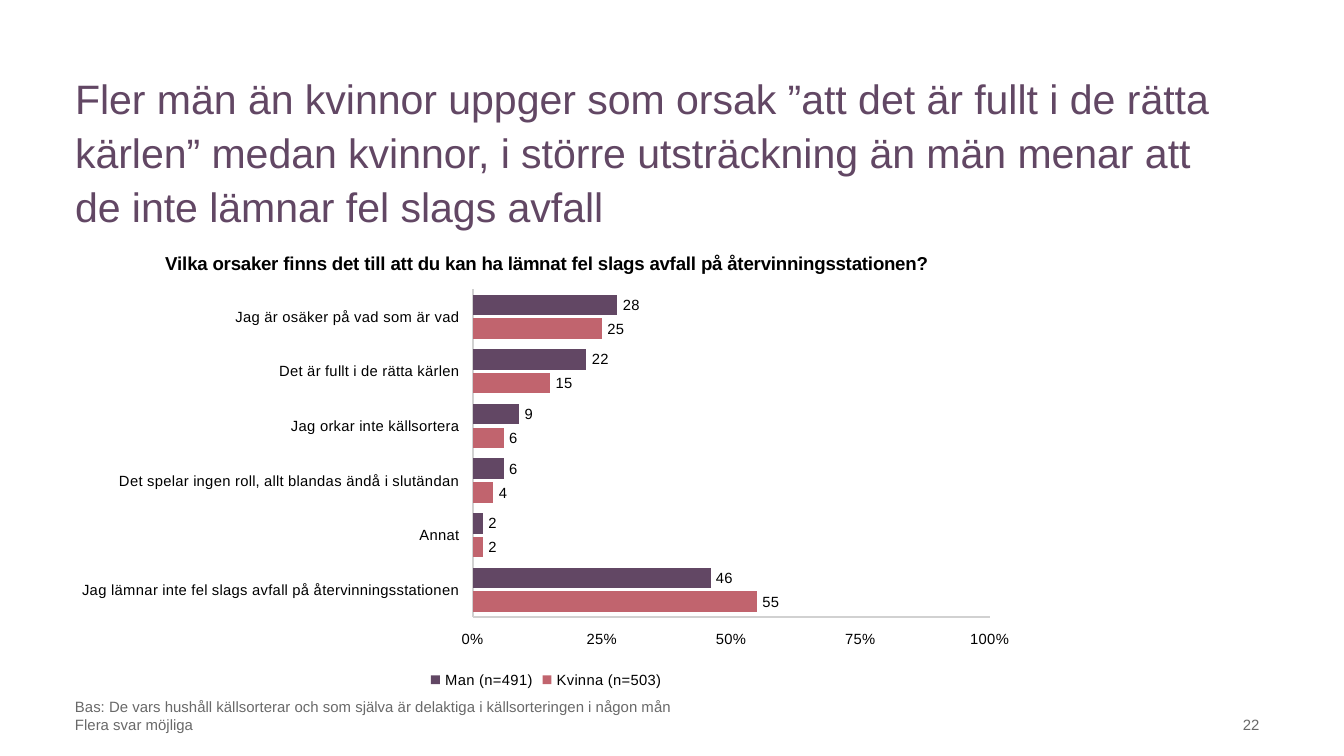
import lxml.etree
import pptx
import pptx.chart.data
import pptx.dml.color
import pptx.enum.chart
import pptx.enum.text
import pptx.oxml
import pptx.oxml.ns
import pptx.util

COLORS = {
    "plum": "624764",
    "rose": "C1646E",
    "gray": "696969",
    "axis": "D1D1D1",
    "black": "000000",
}
FONT = "Arial"
CELL = 0.1
COLUMNS, ROWS = 100, 56.25
LABEL_SIZE = 7.9
CATEGORIES = [
    "Jag lämnar inte fel slags avfall på återvinningsstationen",
    "Annat",
    "Det spelar ingen roll, allt blandas ändå i slutändan",
    "Jag orkar inte källsortera",
    "Det är fullt i de rätta kärlen",
    "Jag är osäker på vad som är vad",
]
SERIES = [
    ("Kvinna (n=503)", "rose", (55, 2, 4, 6, 15, 25)),
    ("Man (n=491)", "plum", (46, 2, 6, 9, 22, 28)),
]
PLOT_PERCENT = {"x": 42.4, "y": 12.6, "w": 53.5, "h": 70.9}


def grid(*cells):
    return [pptx.util.Inches(cell * CELL) for cell in cells]


def rgb(name):
    return pptx.dml.color.RGBColor.from_string(COLORS[name])


def style_font(font, size, color="black", bold=False):
    font.name = FONT
    font.size = pptx.util.Pt(size)
    font.bold = bold
    font.color.rgb = rgb(color)


def add_text(slide, text, area, size=8, color="gray", align="LEFT",
             anchor="BOTTOM", line_spacing=None):
    shape = slide.shapes.add_textbox(*grid(*area))
    frame = shape.text_frame
    frame.word_wrap = True
    frame.vertical_anchor = getattr(pptx.enum.text.MSO_ANCHOR, anchor)
    frame.text = text
    for paragraph in frame.paragraphs:
        paragraph.alignment = getattr(pptx.enum.text.PP_ALIGN, align)
        paragraph.line_spacing = line_spacing
        for run in paragraph.runs:
            style_font(run.font, size, color)


def style_axis(axis):
    axis.has_major_gridlines = False
    axis.major_tick_mark = pptx.enum.chart.XL_TICK_MARK.NONE
    axis.minor_tick_mark = pptx.enum.chart.XL_TICK_MARK.NONE
    axis.tick_label_position = pptx.enum.chart.XL_TICK_LABEL_POSITION.LOW
    axis.format.line.color.rgb = rgb("axis")
    axis.format.line.width = pptx.util.Pt(0.75)
    style_font(axis.tick_labels.font, LABEL_SIZE)


def set_plot_layout(chart):
    plot_area = chart._chartSpace.chart.plotArea
    layout_tag = pptx.oxml.ns.qn("c:layout")
    for layout in plot_area.findall(layout_tag):
        plot_area.remove(layout)
    layout = lxml.etree.Element(layout_tag)
    manual = lxml.etree.SubElement(layout, pptx.oxml.ns.qn("c:manualLayout"))
    settings = {"layoutTarget": "inner", "xMode": "edge", "yMode": "edge"}
    settings.update({name: value / 100 for name, value in PLOT_PERCENT.items()})
    for name, value in settings.items():
        element = lxml.etree.SubElement(manual, pptx.oxml.ns.qn(f"c:{name}"))
        element.set("val", str(value))
    plot_area.insert(0, layout)


def style_series(series, color):
    series.format.fill.solid()
    series.format.fill.fore_color.rgb = rgb(color)
    series.invert_if_negative = False
    labels = series.data_labels
    labels.show_value = True
    labels.number_format = "0"
    labels.number_format_is_linked = False
    labels.position = pptx.enum.chart.XL_LABEL_POSITION.OUTSIDE_END
    style_font(labels.font, LABEL_SIZE)


def add_bar_chart(slide, title, area):
    data = pptx.chart.data.CategoryChartData()
    data.categories = CATEGORIES
    for name, _, values in SERIES:
        data.add_series(name, values)
    chart = slide.shapes.add_chart(
        pptx.enum.chart.XL_CHART_TYPE.BAR_CLUSTERED, *grid(*area), data
    ).chart
    style_font(chart.font, 10)

    chart.has_title = True
    chart.chart_title.text_frame.text = title
    run = chart.chart_title.text_frame.paragraphs[0].runs[0]
    style_font(run.font, 10, bold=True)

    chart.has_legend = True
    chart.legend.position = pptx.enum.chart.XL_LEGEND_POSITION.BOTTOM
    chart.legend.include_in_layout = False
    style_font(chart.legend.font, LABEL_SIZE)

    plot = chart.plots[0]
    plot.vary_by_categories = False
    plot.gap_width = 50
    plot.overlap = -16
    for series, (_, color, _) in zip(plot.series, SERIES):
        style_series(series, color)

    for axis in (chart.category_axis, chart.value_axis):
        style_axis(axis)
    chart.value_axis.minimum_scale = 0
    chart.value_axis.maximum_scale = 100
    chart.value_axis.major_unit = 25
    chart.value_axis.tick_labels.number_format = "General\\%"
    chart.value_axis.tick_labels.number_format_is_linked = False
    set_plot_layout(chart)


def main():
    presentation = pptx.Presentation()
    presentation.slide_width, presentation.slide_height = grid(COLUMNS, ROWS)
    slide = presentation.slides.add_slide(presentation.slide_layouts[6])

    add_text(
        slide,
        "Fler män än kvinnor uppger som orsak ”att det är fullt i de rätta "
        "kärlen” medan kvinnor, i större utsträckning än män menar att "
        "de inte lämnar fel slags avfall",
        (4.6, 4.6, 88.2, 8.6),
        size=22, color="plum", anchor="TOP", line_spacing=1.1,
    )
    add_bar_chart(
        slide,
        "Vilka orsaker finns det till att du kan ha lämnat fel slags avfall "
        "på återvinningsstationen?",
        (4.7, 17.2, 71.9, 34.4),
    )
    add_text(
        slide,
        "Bas: De vars hushåll källsorterar och som själva är delaktiga i "
        "källsorteringen i någon mån\nFlera svar möjliga",
        (4.6, 52.1, 78, 3),
    )
    add_text(slide, "22", (84, 52.1, 10.7, 3), align="RIGHT")
    presentation.save("out.pptx")


if __name__ == "__main__":
    main()
